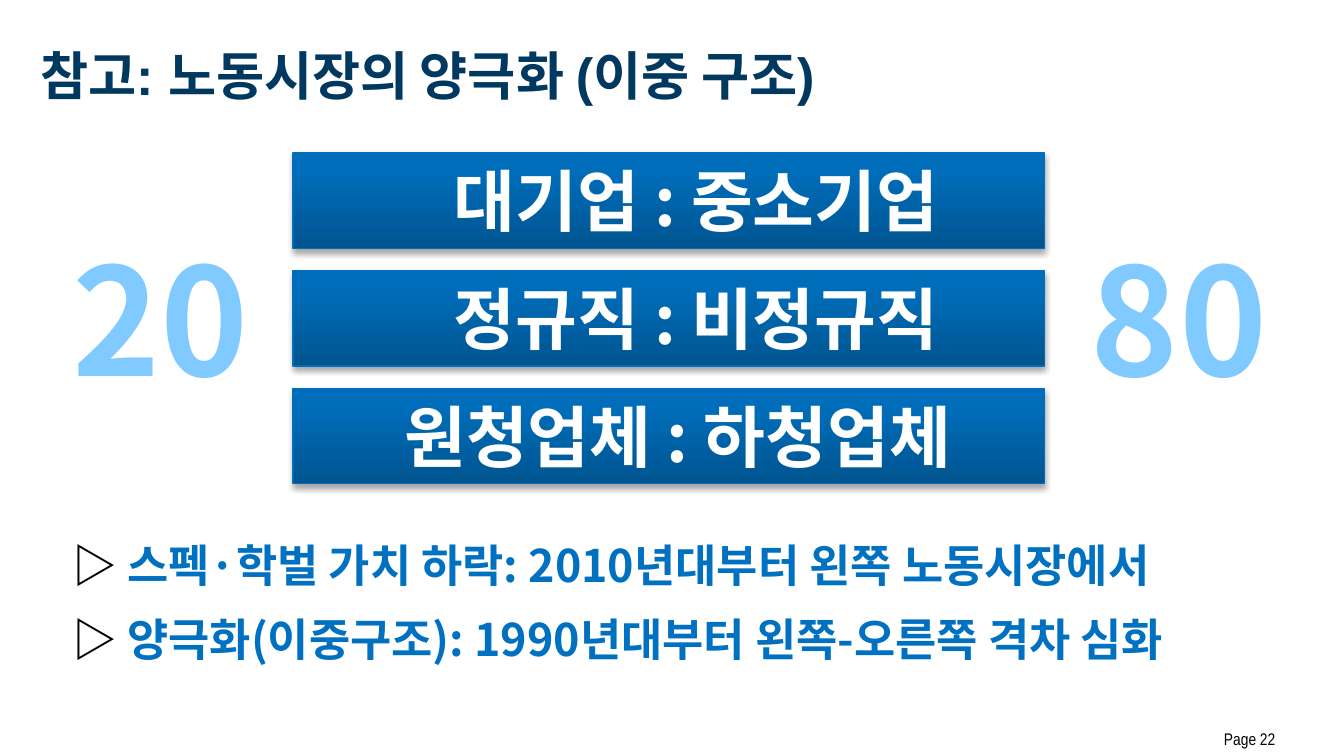
from lxml.etree import SubElement
from pptx import Presentation
from pptx.dml.color import RGBColor
from pptx.enum.shapes import MSO_SHAPE as SHAPE
from pptx.enum.text import MSO_ANCHOR as ANCHOR, PP_ALIGN as ALIGN
from pptx.oxml.ns import qn
from pptx.util import Pt

# Content
TITLE = "참고: 노동시장의 양극화 (이중 구조)"
PAGE = "Page 22"
BARS = [  # text, extra left inset
    ("대기업 : 중소기업", 29),
    ("정규직 : 비정규직", 29),
    ("원청업체 : 하청업체", 9.5),
]
SHARES = [("20", 31.7), ("80", 577.4)]  # text, left
NOTES = [
    "스펙·학벌 가치 하락: 2010년대부터 왼쪽 노동시장에서",
    "양극화(이중구조): 1990년대부터 왼쪽-오른쪽 격차 심화",
]

# Style and layout
KOREAN = "Noto Sans CJK KR"
GRADIENT = [(0, "00548F"), (80, "006DBA"), (100, "006DBB")]
BAR_LEFT, BAR_TOP, BAR_W, BAR_H, BAR_STEP = 157, 82, 402.5, 51.2, 63
NOTE_TOP, NOTE_STEP = 284.4, 39.6

prs = Presentation()
prs.slide_width, prs.slide_height = Pt(720), Pt(405)
s = prs.slides.add_slide(prs.slide_layouts[6])


def rgb(color):
    return RGBColor.from_string(color)


def write(sp, runs, size, font=KOREAN, bold=True, align=ALIGN.LEFT):
    """Fill a shape with one paragraph of (text, color) runs."""
    tf = sp.text_frame
    tf.word_wrap = True
    p = tf.paragraphs[0]
    p.alignment = align
    p.font.size, p.font.bold, p.font.name = Pt(size), bold, font
    props = p._p.pPr.find(qn("a:defRPr"))
    SubElement(props, qn("a:ea"), typeface=KOREAN)
    for text, color in runs:
        r = p.add_run()
        r.text = text
        r.font.color.rgb = rgb(color)
    return tf


def add_text(box, runs, size, **style):
    return write(s.shapes.add_textbox(*map(Pt, box)), runs, size, **style)


def set_gradient(sp, stops):
    sp.fill.gradient()
    sp.fill.gradient_angle = 90
    gs_list = sp._element.spPr.find(".//" + qn("a:gsLst"))
    for gs in list(gs_list):
        gs_list.remove(gs)
    for pos, color in stops:
        gs = SubElement(gs_list, qn("a:gs"), pos=str(pos * 1000))
        SubElement(gs, qn("a:srgbClr"), val=color)


def set_shadow(sp, color, alpha, blur, dist):
    sp.shadow.inherit = False
    effects = sp._element.spPr.find(qn("a:effectLst"))
    shadow = SubElement(effects, qn("a:outerShdw"), blurRad=str(Pt(blur)),
                        dist=str(Pt(dist)), dir="5400000", rotWithShape="0")
    clr = SubElement(shadow, qn("a:srgbClr"), val=color)
    SubElement(clr, qn("a:alpha"), val=str(alpha * 1000))


# Title
tf = add_text((6.5, 25.2, 713.5, 35.3), [(TITLE, "003860")], 28, font="Arial")
tf.margin_left = Pt(15)
tf.paragraphs[0].line_spacing = Pt(28)

# Contrast bars
for i, (text, inset) in enumerate(BARS):
    box = (BAR_LEFT, BAR_TOP + i * BAR_STEP, BAR_W, BAR_H)
    sp = s.shapes.add_shape(SHAPE.RECTANGLE, *map(Pt, box))
    set_gradient(sp, GRADIENT)
    sp.line.color.rgb, sp.line.width = rgb("006EBC"), Pt(0.75)
    set_shadow(sp, "000000", 35, 3.1, 1.8)
    tf = write(sp, [(text, "FFFFFF")], 36, align=ALIGN.CENTER)
    tf.margin_left = Pt(7.2 + inset)
    tf.vertical_anchor = ANCHOR.TOP

# Shares on both sides
for text, left in SHARES:
    add_text((left, 118, 111, 104.4), [(text, "80CAFF")], 80)

# Notes
for i, text in enumerate(NOTES):
    add_text((31.7, NOTE_TOP + i * NOTE_STEP, 677, 36),
             [("▷ ", "000000"), (text, "0070C0")], 24)

# Page number
tf = add_text((516.2, 386, 167, 19.4), [(PAGE, "000000")], 9,
              font="Arial Narrow", bold=False, align=ALIGN.RIGHT)
tf.margin_left = tf.margin_right = tf.margin_top = tf.margin_bottom = 0
tf.vertical_anchor = ANCHOR.MIDDLE

prs.save("out.pptx")
